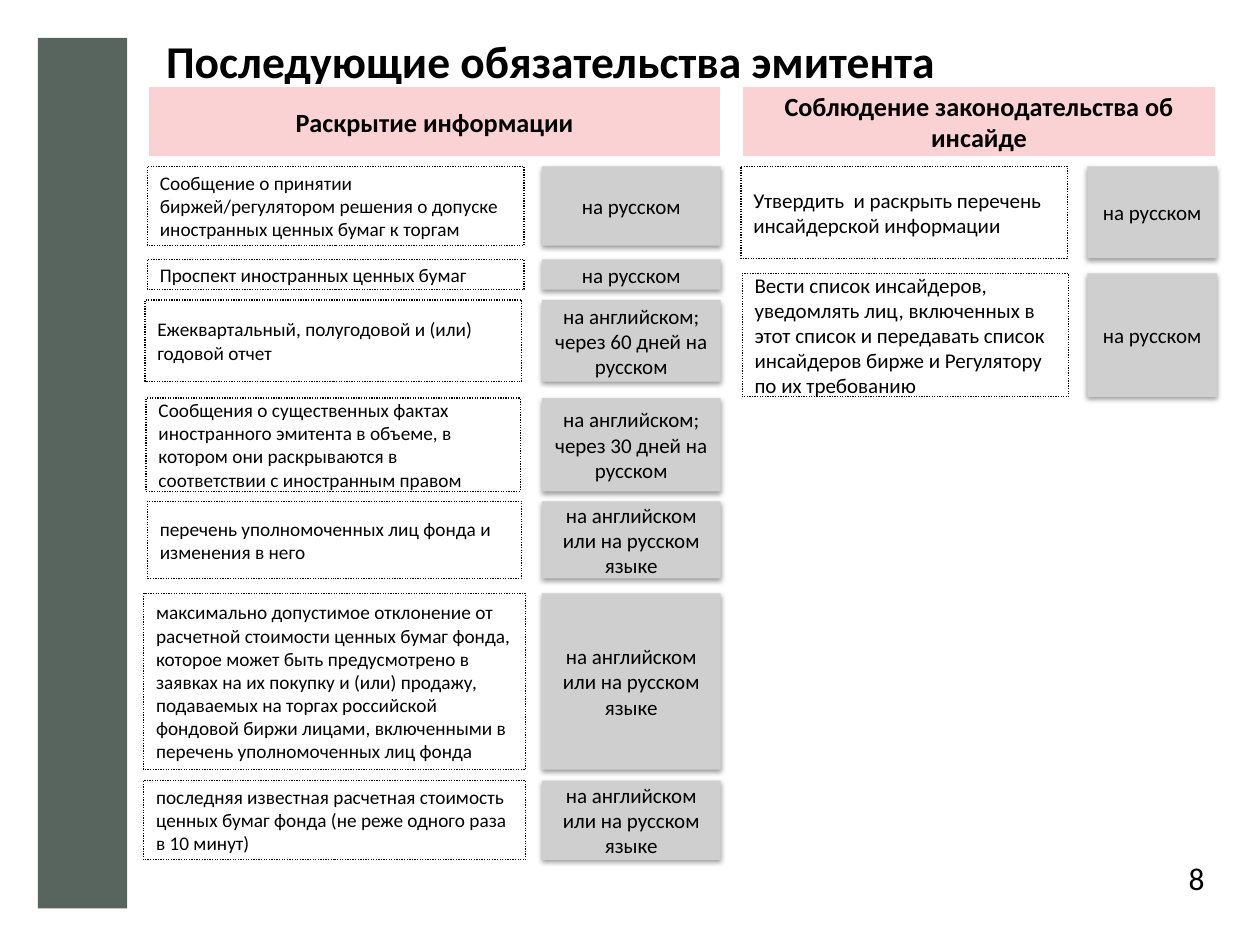
from dataclasses import dataclass
from typing import NamedTuple

from lxml.etree import SubElement
from pptx import Presentation
from pptx.dml.color import RGBColor
from pptx.enum.dml import MSO_LINE
from pptx.enum.shapes import MSO_SHAPE
from pptx.enum.text import MSO_ANCHOR as Anchor, PP_ALIGN as Align
from pptx.oxml.ns import qn
from pptx.util import Inches, Pt

GRID_COLUMNS, GRID_ROWS = 1000, 750


@dataclass(frozen=True)
class Theme:
    font: str = "Calibri"
    ink: RGBColor = RGBColor(0, 0, 0)
    paper: RGBColor = RGBColor(255, 255, 255)
    sidebar: RGBColor = RGBColor(0x58, 0x64, 0x5E)
    heading: RGBColor = RGBColor(0xFB, 0xD2, 0xD3)
    language: RGBColor = RGBColor(0xCF, 0xCF, 0xCF)
    title_size: int = 26
    number_size: int = 18
    heading_size: int = 15
    language_size: int = 12


class Area(NamedTuple):
    column: float
    row: float
    columns: float
    rows: float


class Duty(NamedTuple):
    area: Area
    text: str
    language: str


@dataclass(frozen=True)
class Section:
    heading: str
    heading_area: Area
    language_column: float
    language_columns: float
    duty_size: int
    duties: tuple[Duty, ...]


THEME = Theme()
RUSSIAN = "на русском"
EITHER = "на английском или на русском языке"
DELAYED = "на английском;\nчерез {} дней на русском"

SECTIONS = (
    Section("Раскрытие информации", Area(117, 68, 456, 57), 430, 142, 11, (
        Duty(Area(117, 132, 299, 63), "Сообщение о принятии биржей/регулятором решения "
             "о допуске иностранных ценных бумаг к торгам", RUSSIAN),
        Duty(Area(117, 206, 299, 24), "Проспект иностранных ценных бумаг", RUSSIAN),
        Duty(Area(115, 238, 299, 65), "Ежеквартальный, полугодовой и (или) годовой отчет",
             DELAYED.format(60)),
        Duty(Area(116, 316, 297, 74), "Сообщения о существенных фактах иностранного "
             "эмитента в объеме, в котором они раскрываются в соответствии с "
             "иностранным правом", DELAYED.format(30)),
        Duty(Area(117, 398, 297, 61), "перечень уполномоченных лиц фонда и изменения "
             "в него", EITHER),
        Duty(Area(114, 471, 303, 140), "максимально допустимое отклонение от расчетной "
             "стоимости ценных бумаг фонда, которое может быть предусмотрено в заявках "
             "на их покупку и (или) продажу, подаваемых на торгах российской фондовой "
             "биржи лицами, включенными в перечень уполномоченных лиц фонда", EITHER),
        Duty(Area(114, 619.5, 303, 63), "последняя известная расчетная стоимость ценных "
             "бумаг фонда (не реже одного раза в 10 минут)", EITHER),
    )),
    Section("Соблюдение законодательства об инсайде", Area(588, 68, 378, 57),
            863, 103, 12, (
        Duty(Area(588, 132, 259, 73), "Утвердить  и раскрыть перечень инсайдерской "
             "информации", RUSSIAN),
        Duty(Area(589, 217, 259, 98), "Вести список инсайдеров, уведомлять лиц, "
             "включенных в этот список и передавать список инсайдеров бирже и "
             "Регулятору по их требованию", RUSSIAN),
    )),
)

deck = Presentation()
deck.slide_width, deck.slide_height = Inches(10), Inches(7.5)
slide = deck.slides.add_slide(deck.slide_layouts[6])


def place(area: Area) -> tuple[int, ...]:
    across = deck.slide_width / GRID_COLUMNS
    down = deck.slide_height / GRID_ROWS
    return (round(area.column * across), round(area.row * down),
            round(area.columns * across), round(area.rows * down))


def write(holder, text: str, size: int, align=Align.LEFT, anchor=Anchor.MIDDLE,
          bold: bool = False) -> None:
    frame = holder.text_frame
    frame.word_wrap = True
    frame.vertical_anchor = anchor
    frame.text = text
    for paragraph in frame.paragraphs:
        paragraph.alignment = align
        font = paragraph.font
        font.name, font.size, font.bold = THEME.font, Pt(size), bold
        font.color.rgb = THEME.ink


def add_panel(area: Area, fill: RGBColor | None = None):
    panel = slide.shapes.add_shape(MSO_SHAPE.RECTANGLE, *place(area))
    panel.shadow.inherit = False
    panel.line.fill.background()
    if fill is None:
        panel.fill.background()
    else:
        panel.fill.solid()
        panel.fill.fore_color.rgb = fill
    return panel


def outline(panel, color: RGBColor, width: float) -> None:
    panel.line.color.rgb = color
    panel.line.width = Pt(width)


def cast_shadow(panel) -> None:
    effects = panel._element.spPr.find(qn("a:effectLst"))
    shadow = SubElement(effects, qn("a:outerShdw"), blurRad=str(Pt(3.1)),
                        dist=str(Pt(1.6)), dir="5400000", rotWithShape="0")
    color = SubElement(shadow, qn("a:srgbClr"), val=str(THEME.ink))
    SubElement(color, qn("a:alpha"), val="38000")


def add_section(section: Section) -> None:
    heading = add_panel(section.heading_area, THEME.heading)
    outline(heading, THEME.paper, 2)
    write(heading, section.heading, THEME.heading_size, Align.CENTER, bold=True)
    for area, text, language in section.duties:
        duty = add_panel(area)
        outline(duty, THEME.ink, 0.75)
        duty.line.dash_style = MSO_LINE.ROUND_DOT
        write(duty, text, section.duty_size)
        label = add_panel(area._replace(column=section.language_column,
                                        columns=section.language_columns), THEME.language)
        cast_shadow(label)
        write(label, language, THEME.language_size, Align.CENTER)


def main() -> None:
    add_panel(Area(30, 30, 71, 691), THEME.sidebar)
    title = slide.shapes.add_textbox(*place(Area(122, 21, 811, 44)))
    write(title, "Последующие обязательства эмитента", THEME.title_size,
          anchor=Anchor.TOP, bold=True)
    for section in SECTIONS:
        add_section(section)
    number = slide.shapes.add_textbox(*place(Area(917, 677, 39, 39)))
    number.text_frame.margin_right = number.text_frame.margin_bottom = 0
    write(number, "8", THEME.number_size, Align.RIGHT, Anchor.TOP)
    deck.save("out.pptx")


if __name__ == "__main__":
    main()
